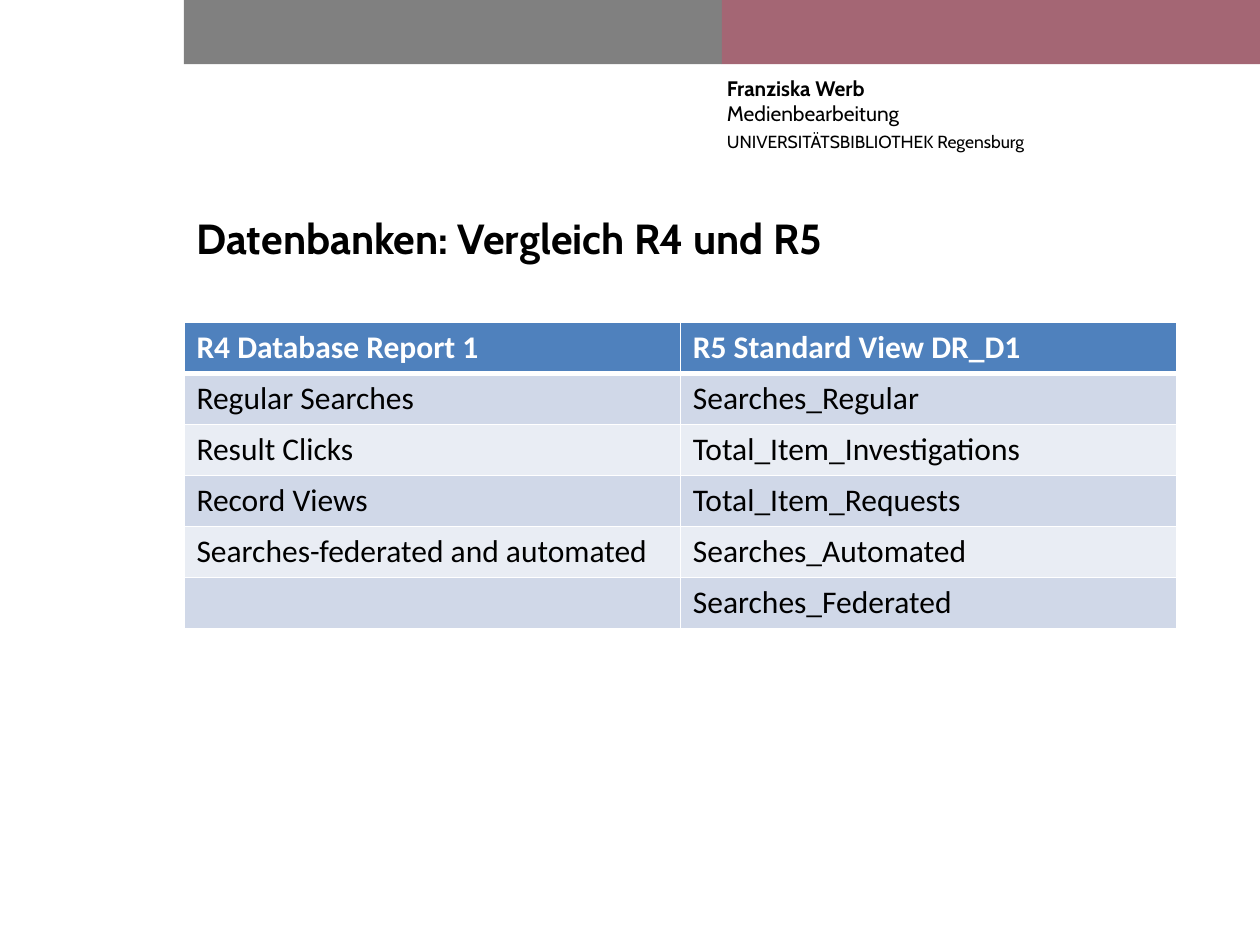
from lxml.etree import SubElement
from pptx import Presentation
from pptx.dml.color import RGBColor
from pptx.enum.shapes import MSO_SHAPE
from pptx.enum.text import MSO_ANCHOR, MSO_AUTO_SIZE, PP_ALIGN
from pptx.oxml.ns import qn
from pptx.util import Inches, Pt

BLACK = RGBColor(0x00, 0x00, 0x00)
WHITE = RGBColor(0xFF, 0xFF, 0xFF)
GREY = RGBColor(0x80, 0x80, 0x80)
MAUVE = RGBColor(0xA4, 0x66, 0x74)
HEADER_BLUE = RGBColor(0x4F, 0x81, 0xBD)
ROW_BANDS = (RGBColor(0xD0, 0xD8, 0xE8), RGBColor(0xE9, 0xED, 0xF4))

LEFT = 1.46
BAND_WIDTH = 4.27
BAND_HEIGHT = 0.51

COMPARISON = [
    ("R4 Database Report 1", "R5 Standard View DR_D1"),
    ("Regular Searches", "Searches_Regular"),
    ("Result Clicks", "Total_Item_Investigations"),
    ("Record Views", "Total_Item_Requests"),
    ("Searches-federated and automated", "Searches_Automated"),
    ("", "Searches_Federated"),
]


def write(paragraph, text, *, font, size, bold=False, color=BLACK):
    run = paragraph.add_run()
    run.text = text
    run.font.name = font
    run.font.size = Pt(size)
    run.font.bold = bold
    run.font.color.rgb = color


def set_borders(cell, **widths):
    """Draw white cell borders; widths in points, keyed L, R, T, B."""
    properties = cell._tc.get_or_add_tcPr()
    for side in "LRTB":
        line = SubElement(properties, qn(f"a:ln{side}"), w=str(Pt(widths.get(side, 1))))
        fill = SubElement(line, qn("a:solidFill"))
        SubElement(fill, qn("a:srgbClr"), val=str(WHITE))


class SlideBuilder:
    heading_font = "Cabin"
    table_font = "Calibri"

    def __init__(self, slide):
        self.slide = slide

    def band(self, left, color):
        band = self.slide.shapes.add_shape(
            MSO_SHAPE.RECTANGLE, Inches(left), Inches(0), Inches(BAND_WIDTH), Inches(BAND_HEIGHT)
        )
        band.shadow.inherit = False
        band.fill.solid()
        band.fill.fore_color.rgb = color
        band.line.fill.background()

    def sender(self, name, department, institution):
        box = self.slide.shapes.add_textbox(Inches(5.77), Inches(0.6), Inches(4.04), Inches(0.94))
        frame = box.text_frame
        frame.word_wrap = True
        frame.margin_left = frame.margin_right = frame.margin_top = frame.margin_bottom = 0
        person = frame.paragraphs[0]
        write(person, name, font=self.heading_font, size=12, bold=True)
        person.add_line_break()
        write(person, department, font=self.heading_font, size=12)
        library = frame.add_paragraph()
        write(library, institution, font=self.heading_font, size=10)
        for paragraph in frame.paragraphs:
            paragraph.space_after = Pt(3)

    def title(self, text):
        title = self.slide.shapes.title
        title.left, title.top = Inches(LEFT), Inches(1.64)
        title.width, title.height = Inches(7.86), Inches(0.76)
        frame = title.text_frame
        frame.auto_size = MSO_AUTO_SIZE.NONE
        frame.vertical_anchor = MSO_ANCHOR.TOP
        frame.paragraphs[0].alignment = PP_ALIGN.LEFT
        write(frame.paragraphs[0], text, font=self.heading_font, size=24, bold=True)

    def table(self, rows):
        column_count = len(rows[0])
        table = self.slide.shapes.add_table(
            len(rows), column_count, Inches(LEFT), Inches(2.56),
            Inches(3.94 * column_count), Inches(0.405 * len(rows)),
        ).table
        for row_index, row in enumerate(rows):
            is_header = row_index == 0
            fill_color = HEADER_BLUE if is_header else ROW_BANDS[(row_index - 1) % 2]
            for column_index, text in enumerate(row):
                cell = table.cell(row_index, column_index)
                set_borders(cell, B=3 if is_header else 1, T=3 if row_index == 1 else 1)
                cell.fill.solid()
                cell.fill.fore_color.rgb = fill_color
                if text:
                    write(cell.text_frame.paragraphs[0], text, font=self.table_font, size=18,
                          bold=is_header, color=WHITE if is_header else BLACK)


def main():
    presentation = Presentation()
    presentation.slide_width, presentation.slide_height = Inches(10), Inches(7.5)
    title_only = presentation.slide_layouts[5]
    builder = SlideBuilder(presentation.slides.add_slide(title_only))

    for index, color in enumerate((GREY, MAUVE)):
        builder.band(LEFT + index * BAND_WIDTH, color)
    builder.sender("Franziska Werb", "Medienbearbeitung", "UNIVERSITÄTSBIBLIOTHEK Regensburg")
    builder.title("Datenbanken: Vergleich R4 und R5")
    builder.table(COMPARISON)

    presentation.save("out.pptx")


if __name__ == "__main__":
    main()
